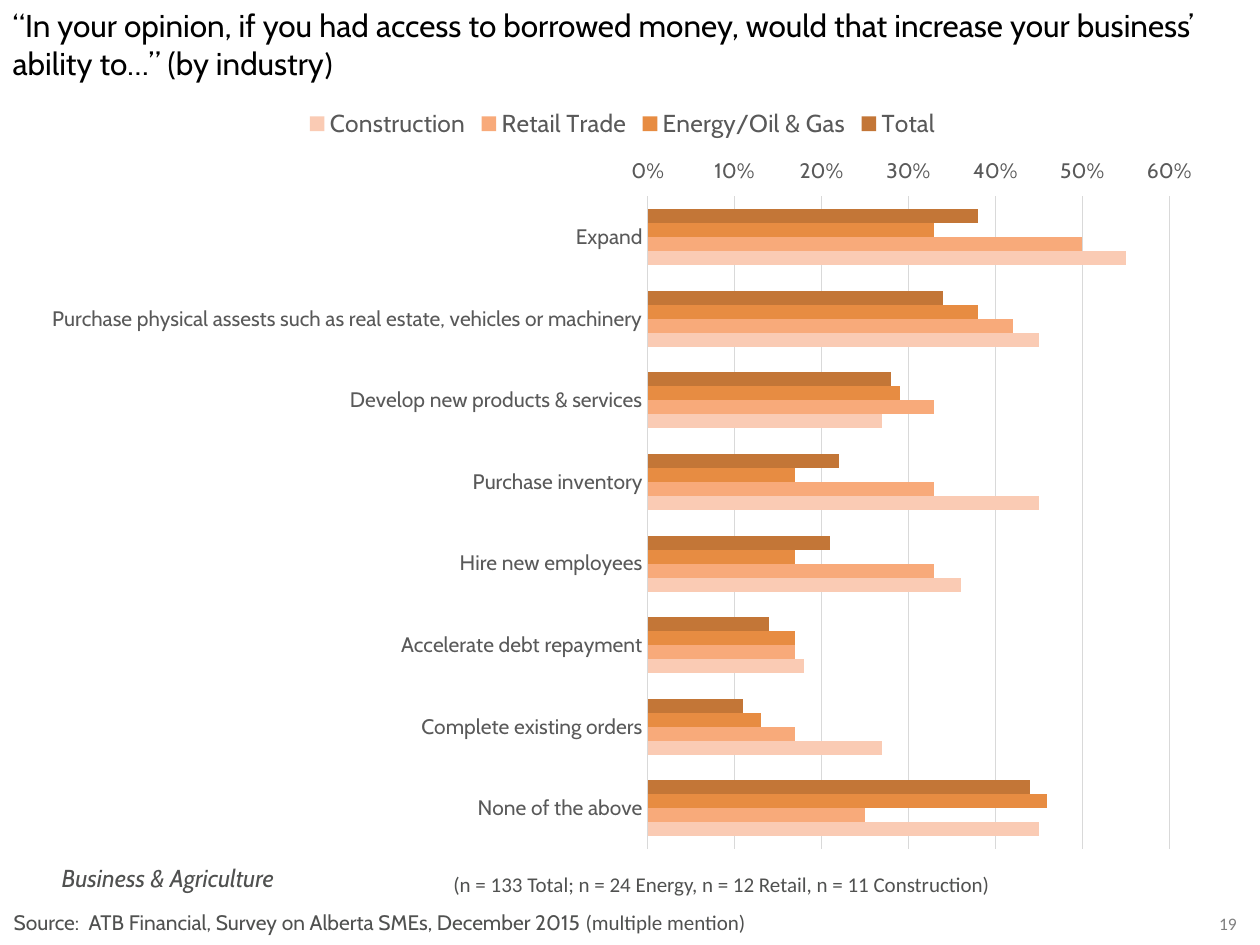
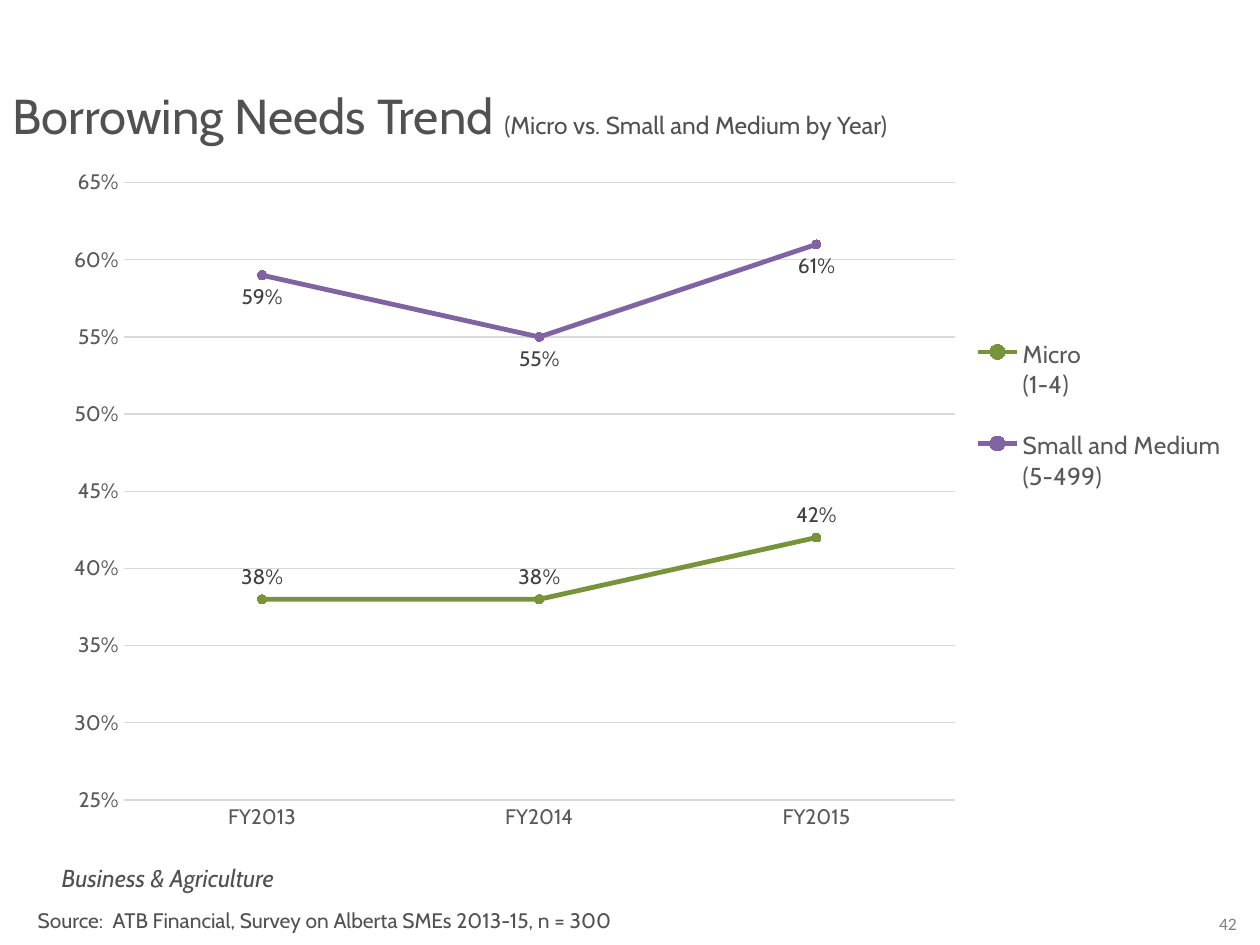
from dataclasses import dataclass

import pptx
import pptx.chart.data
import pptx.dml.color
import pptx.enum.chart
import pptx.enum.text
import pptx.oxml
import pptx.oxml.ns
import pptx.util
from pptx.util import Inches


@dataclass(frozen=True)
class Theme:
    font: str = "Cabin"
    plain_font: str = "Calibri"
    ink: str = "505150"
    black: str = "000000"
    axis_ink: str = "595959"
    label_ink: str = "404040"
    number_ink: str = "808080"
    grid: str = "D9D9D9"
    bars: tuple = ("C37637", "E78C42", "F8AA7A", "FACBB4")
    lines: tuple = ("77933C", "8064A2")
    headline: int = 28
    question: int = 18
    medium: int = 14
    small: int = 12
    number: int = 10


THEME = Theme()
CHART = pptx.enum.chart
ALIGN = pptx.enum.text.PP_ALIGN


def rgb(color):
    return pptx.dml.color.RGBColor.from_string(color)


def style_font(font, size, color, name=THEME.font):
    font.name = name
    font.size = pptx.util.Pt(size)
    font.color.rgb = rgb(color)


def add_run(p, text, size, color=THEME.ink, name=THEME.font, italic=False):
    r = p.add_run()
    r.text = text
    style_font(r.font, size, color, name)
    r.font.italic = italic


def set_title(s, box):
    title = s.shapes.title
    title.left, title.top, title.width, title.height = map(Inches, box)
    tf = title.text_frame
    tf.word_wrap = True
    tf.auto_size = pptx.enum.text.MSO_AUTO_SIZE.NONE
    tf.vertical_anchor = pptx.enum.text.MSO_ANCHOR.TOP
    p = tf.paragraphs[0]
    p.alignment = ALIGN.LEFT
    return p


def add_text(s, box, align=ALIGN.LEFT, wrap=True):
    tf = s.shapes.add_textbox(*map(Inches, box)).text_frame
    tf.word_wrap = wrap
    p = tf.paragraphs[0]
    p.alignment = align
    return p


def add_slide(prs, number):
    s = prs.slides.add_slide(prs.slide_layouts[5])
    p = add_text(s, (9.5, 7.2, 0.49, 0.27), ALIGN.CENTER)
    add_run(p, number, THEME.number, THEME.number_ink, THEME.plain_font)
    p = add_text(s, (0.39, 6.8, 2.81, 0.34))
    add_run(p, "Business & Agriculture", THEME.medium, italic=True)
    return s


def place_part(part, box, chart_box, inner=False):
    qn = pptx.oxml.ns.qn
    left, top, width, height = chart_box
    layout = part.find(qn("c:layout"))
    if layout is None:
        layout = pptx.oxml.parse_xml(f"<c:layout {pptx.oxml.ns.nsdecls('c')}/>")
        part.insert(0, layout)
    manual = layout.makeelement(qn("c:manualLayout"), {})
    layout.append(manual)
    settings = [("layoutTarget", "inner")] if inner else []
    settings += [("xMode", "edge"), ("yMode", "edge")]
    settings += [
        ("x", (box[0] - left) / width),
        ("y", (box[1] - top) / height),
        ("w", box[2] / width),
        ("h", box[3] / height),
    ]
    for tag, value in settings:
        manual.append(manual.makeelement(qn(f"c:{tag}"), {"val": str(value)}))


def style_axis(axis):
    axis.major_tick_mark = axis.minor_tick_mark = CHART.XL_TICK_MARK.NONE
    style_font(axis.tick_labels.font, THEME.small, THEME.axis_ink)


def style_rule(line):
    line.color.rgb = rgb(THEME.grid)
    line.width = pptx.util.Pt(0.75)


def add_chart(s, kind, box, plot_box, categories, series, scale, legend_position):
    data = pptx.chart.data.CategoryChartData(number_format="0%")
    data.categories = categories
    for name, values in series:
        data.add_series(name, values)
    chart = s.shapes.add_chart(kind, *map(Inches, box), data).chart
    chart.has_title = False
    style_font(chart.font, THEME.number, THEME.black)

    style_axis(chart.category_axis)
    style_rule(chart.category_axis.format.line)
    axis = chart.value_axis
    style_axis(axis)
    axis.format.line.fill.background()
    axis.has_major_gridlines = True
    style_rule(axis.major_gridlines.format.line)
    axis.minimum_scale, axis.maximum_scale, axis.major_unit = scale
    axis.tick_labels.number_format = "0%"
    axis.tick_labels.number_format_is_linked = False

    chart.has_legend = True
    chart.legend.position = legend_position
    chart.legend.include_in_layout = False
    style_font(chart.legend.font, THEME.medium, THEME.axis_ink)
    chart.plots[0].vary_by_categories = False
    place_part(chart.plots[0]._element.getparent(), plot_box, box, inner=True)
    return chart


def style_bars(chart):
    chart.category_axis.reverse_order = True
    chart.value_axis.tick_label_position = CHART.XL_TICK_LABEL_POSITION.LOW
    plot = chart.plots[0]
    plot.gap_width = 182
    plot.overlap = 0
    for series, color in zip(plot.series, THEME.bars):
        series.format.fill.solid()
        series.format.fill.fore_color.rgb = rgb(color)


def style_lines(chart, label_positions):
    for series, color, position in zip(chart.plots[0].series, THEME.lines, label_positions):
        series.smooth = False
        series.format.line.color.rgb = rgb(color)
        series.format.line.width = pptx.util.Pt(2.75)
        marker = series.marker
        marker.style = CHART.XL_MARKER_STYLE.CIRCLE
        marker.size = 5
        marker.format.fill.solid()
        marker.format.fill.fore_color.rgb = rgb(color)
        marker.format.line.color.rgb = rgb(color)
        labels = series.data_labels
        labels.show_value = True
        labels.position = position
        labels.number_format = "0%"
        labels.number_format_is_linked = False
        style_font(labels.font, THEME.small, THEME.label_ink)


def build_industry_slide(prs):
    s = add_slide(prs, "19")
    p = set_title(s, (0, 0, 9.65, 0.75))
    question = (
        "“In your opinion, if you had access to borrowed money, would that "
        "increase your business’ ability to…” (by industry"
    )
    add_run(p, question, THEME.question, THEME.black)
    add_run(p, ")", THEME.question, THEME.black, THEME.plain_font)

    categories = [
        "Expand",
        "Purchase physical assests such as real estate, vehicles or machinery",
        "Develop new products & services",
        "Purchase inventory",
        "Hire new employees",
        "Accelerate debt repayment",
        "Complete existing orders",
        "None of the above",
    ]
    series = [
        ("Total", (0.38, 0.34, 0.28, 0.22, 0.21, 0.14, 0.11, 0.44)),
        ("Energy/Oil & Gas", (0.33, 0.38, 0.29, 0.17, 0.17, 0.17, 0.13, 0.46)),
        ("Retail Trade", (0.5, 0.42, 0.33, 0.33, 0.33, 0.17, 0.17, 0.25)),
        ("Construction", (0.55, 0.45, 0.27, 0.45, 0.36, 0.18, 0.27, 0.45)),
    ]
    chart = add_chart(
        s, CHART.XL_CHART_TYPE.BAR_CLUSTERED, (0.23, 0.75, 9.42, 6.12),
        (5.14, 1.56, 4.14, 5.18), categories, series, (0, 0.6, 0.1),
        CHART.XL_LEGEND_POSITION.TOP,
    )
    style_bars(chart)

    p = add_text(s, (0.01, 7.17, 9.31, 0.3))
    add_run(p, "Source:  ATB Financial, Survey on Alberta SMEs, December 2015 ", THEME.small)
    add_run(p, "(multiple mention)", THEME.small, name=THEME.plain_font)
    p = add_text(s, (3.5, 6.87, 4.51, 0.3), wrap=False)
    sample = "(n = 133 Total; n = 24 Energy, n = 12 Retail, n = 11 Construction)"
    add_run(p, sample, THEME.small, name=THEME.plain_font)


def build_trend_slide(prs):
    s = add_slide(prs, "42")
    p = set_title(s, (0, 0.63, 10, 0.57))
    add_run(p, "Borrowing Needs Trend ", THEME.headline)
    add_run(p, "(Micro vs. Small and Medium by Year)", THEME.medium)

    box = (0.39, 1.25, 9.51, 5.45)
    series = [
        ("Micro \n(1-4)", (0.38, 0.38, 0.42)),
        ("Small and Medium (5-499)", (0.59, 0.55, 0.61)),
    ]
    chart = add_chart(
        s, CHART.XL_CHART_TYPE.LINE_MARKERS, box, (0.98, 1.45, 6.6, 4.9),
        ["FY2013", "FY2014", "FY2015"], series, (0.25, 0.65, 0.05),
        CHART.XL_LEGEND_POSITION.RIGHT,
    )
    positions = CHART.XL_LABEL_POSITION
    style_lines(chart, (positions.ABOVE, positions.BELOW))
    place_part(chart.legend._element, (7.65, 2.45, 2.15, 1.7), box)

    p = add_text(s, (0.2, 7.15, 8.03, 0.3))
    add_run(p, "Source:  ATB Financial, Survey on Alberta SMEs 2013-15, n = 300", THEME.small)


def main():
    prs = pptx.Presentation()
    prs.slide_width, prs.slide_height = Inches(10), Inches(7.5)
    build_industry_slide(prs)
    build_trend_slide(prs)
    prs.save("out.pptx")


if __name__ == "__main__":
    main()
